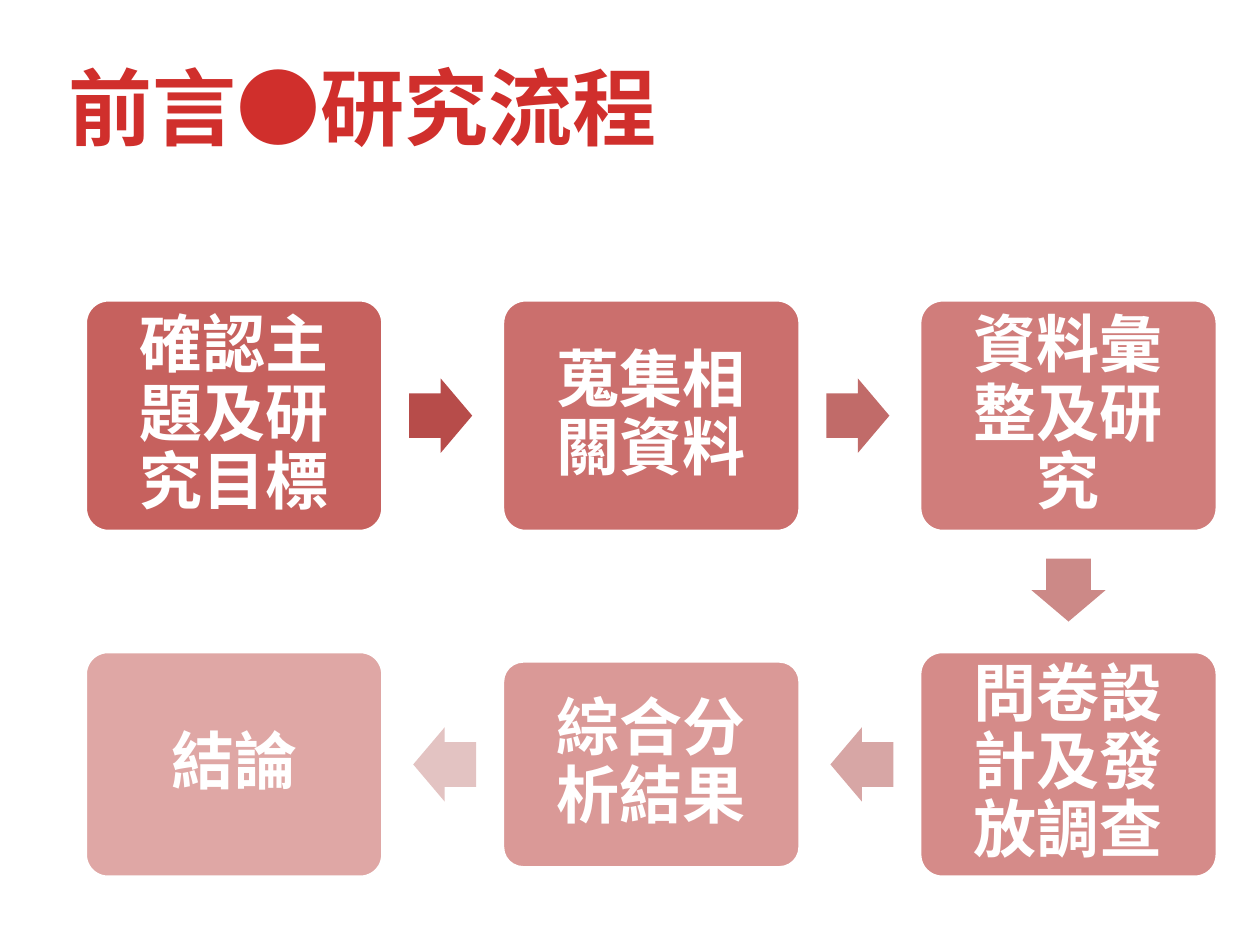
from dataclasses import dataclass
from itertools import pairwise
from math import atan2, cos, degrees

from lxml import etree
from pptx import Presentation
from pptx.dml import color
from pptx.enum import shapes, text
from pptx.oxml import ns
from pptx import util as u


@dataclass(frozen=True)
class Theme:
    head: str = "D02F2C"
    box: str = "C0504D"
    white: str = "FFFFFF"
    tints: tuple = ("B74C4A", "C16B69", "CC8987", "D7A6A5", "E3C3C2")
    latin: str = "Calibri"
    asian: str = "Noto Sans CJK SC"
    big: int = 48
    body: int = 36


class Flow:
    """Draws the title, steps and arrows of a process slide."""

    def __init__(self, theme, slide):
        self.theme = theme
        self.slide = slide

    def style(self, frame, face, size, hue):
        frame.word_wrap = True
        frame.vertical_anchor = text.MSO_ANCHOR.MIDDLE
        para = frame.paragraphs[0]
        para.alignment = text.PP_ALIGN.CENTER
        run = para.runs[0]
        font = run.font
        font.name, font.size, font.bold = face, u.Pt(size), True
        font.color.rgb = color.RGBColor.from_string(hue)
        asian = etree.SubElement(font._element, ns.qn("a:ea"))
        asian.set("typeface", self.theme.asian)
        return para

    def title(self, words, left, top, width, height):
        shape = self.slide.shapes.title
        shape.left, shape.top = u.Cm(left), u.Cm(top)
        shape.width, shape.height = u.Cm(width), u.Cm(height)
        shape.text_frame.text = words
        self.style(shape.text_frame, self.theme.latin, self.theme.big, self.theme.head)

    def shape(self, kind, mid, width, height, hue):
        x, y = mid
        item = self.slide.shapes.add_shape(
            kind, u.Cm(x - width / 2), u.Cm(y - height / 2), u.Cm(width), u.Cm(height))
        item.shadow.inherit = False
        item.fill.solid()
        item.fill.fore_color.rgb = color.RGBColor.from_string(hue)
        item.line.fill.background()
        return item

    def step(self, words, mid, height, alpha):
        kind = shapes.MSO_SHAPE.ROUNDED_RECTANGLE
        item = self.shape(kind, mid, 6, height, self.theme.box)
        item.adjustments[0] = 0.1
        tone = item._element.spPr.find(".//" + ns.qn("a:srgbClr"))
        etree.SubElement(tone, ns.qn("a:alpha")).set("val", str(alpha * 1000))
        item.line.color.rgb = color.RGBColor.from_string(self.theme.white)
        item.line.width = u.Pt(2)
        frame = item.text_frame
        frame.text = words
        frame.margin_left = frame.margin_right = u.Cm(0.38)
        frame.margin_top = frame.margin_bottom = u.Cm(0.38)
        para = self.style(frame, self.theme.asian, self.theme.body, self.theme.white)
        para.line_spacing = 0.9

    def arrow(self, start, end, hue):
        turn = atan2(end[1] - start[1], end[0] - start[0])
        mid = ((start[0] + end[0]) / 2 - 0.04 * cos(turn), (start[1] + end[1]) / 2)
        item = self.shape(shapes.MSO_SHAPE.RIGHT_ARROW, mid, 1.27, 1.5, hue)
        item.adjustments[0], item.adjustments[1] = 0.6, 0.5
        item.rotation = degrees(turn)


def main():
    deck = Presentation()
    deck.slide_width, deck.slide_height = u.Cm(25.4), u.Cm(19.05)
    theme = Theme()
    flow = Flow(theme, deck.slides.add_slide(deck.slide_layouts[5]))
    flow.title("前言●研究流程", 0.51, 0.74, 13.59, 2.79)

    steps = [
        ("確認主題及研究目標", 4.67),
        ("蒐集相關資料", 4.67),
        ("資料彙整及研究", 4.67),
        ("問卷設計及發放調查", 4.55),
        ("綜合分析結果", 4.17),
        ("結論", 4.55),
    ]
    cols = [4.72 + 8.41 * i for i in range(3)]
    mids = [(x, 8.38) for x in cols] + [(x, 15.41) for x in reversed(cols)]
    for i, ((words, height), mid) in enumerate(zip(steps, mids)):
        flow.step(words, mid, height, 90 - 8 * i)
    for (start, end), hue in zip(pairwise(mids), theme.tints):
        flow.arrow(start, end, hue)
    deck.save("out.pptx")


if __name__ == "__main__":
    main()
